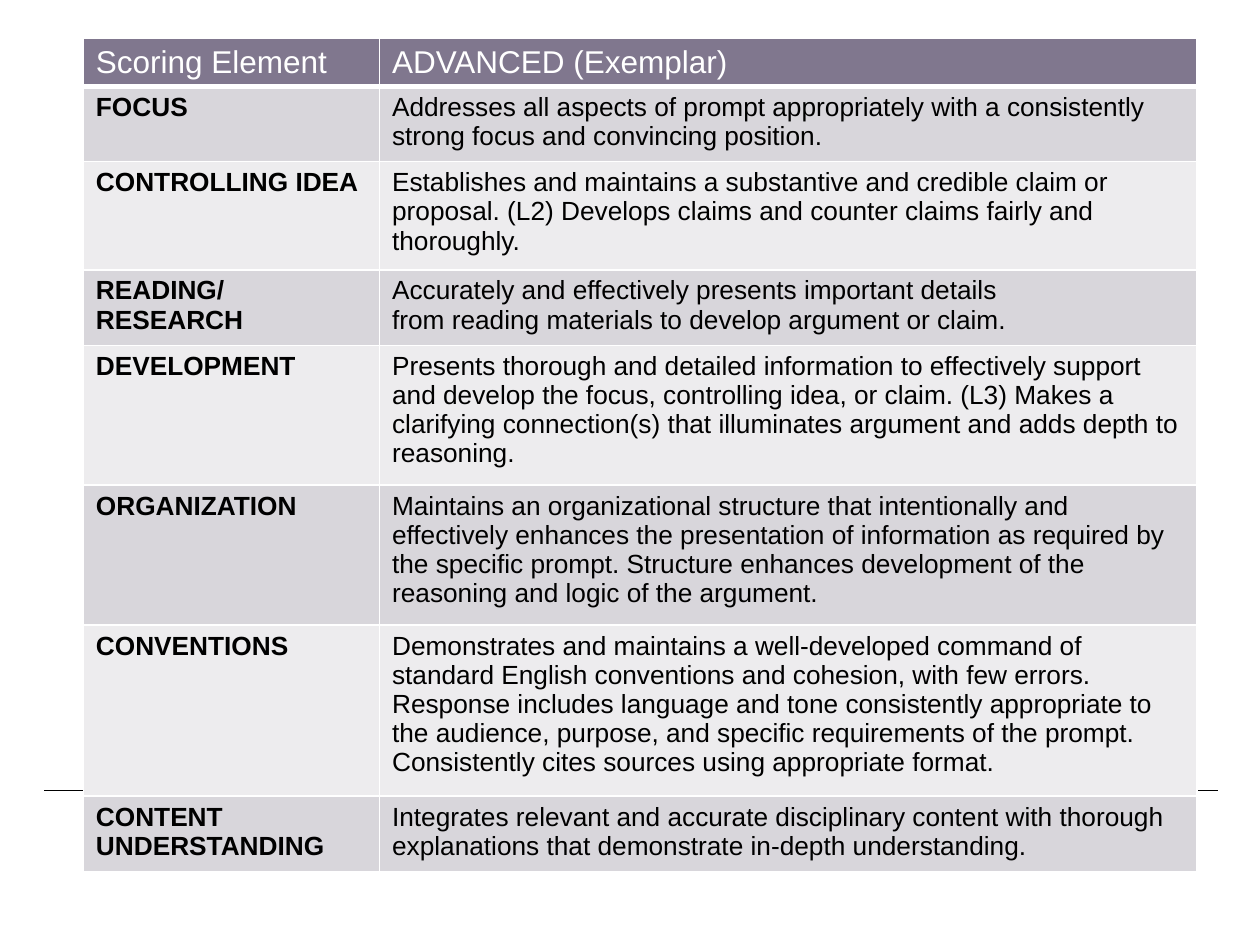
from dataclasses import dataclass

import lxml.etree
import pptx
import pptx.dml.color
import pptx.enum.shapes
import pptx.oxml.ns
import pptx.presentation
import pptx.slide
import pptx.table
import pptx.util

Cm = pptx.util.Cm
Pt = pptx.util.Pt
qn = pptx.oxml.ns.qn

COLORS = {
    "header": "80778E",
    "odd": "D8D6DB",
    "even": "EDECEE",
    "white": "FFFFFF",
    "black": "000000",
}
FONT = "Arial"
COLUMN_WIDTHS = (5.97, 16.48)


@dataclass
class Criterion:
    element: str
    advanced: str
    height: float


HEADER = Criterion("Scoring Element", "ADVANCED (Exemplar)", 0.97)
CRITERIA = [
    Criterion(
        "FOCUS",
        "Addresses all aspects of prompt appropriately with a consistently "
        "strong focus and convincing position.",
        1.52,
    ),
    Criterion(
        "CONTROLLING IDEA",
        "Establishes and maintains a substantive and credible claim or proposal. "
        "(L2) Develops claims and counter claims fairly and thoroughly.",
        2.18,
    ),
    Criterion(
        "READING/ RESEARCH",
        "Accurately and effectively presents important details\n"
        "from reading materials to develop argument or claim.",
        1.52,
    ),
    Criterion(
        "DEVELOPMENT",
        "Presents thorough and detailed information to effectively support and "
        "develop the focus, controlling idea, or claim. (L3) Makes a clarifying "
        "connection(s) that illuminates argument and adds depth to reasoning.",
        2.82,
    ),
    Criterion(
        "ORGANIZATION",
        "Maintains an organizational structure that intentionally and effectively "
        "enhances the presentation of information as required by the specific "
        "prompt. Structure enhances development of the reasoning and logic of "
        "the argument.",
        2.82,
    ),
    Criterion(
        "CONVENTIONS",
        "Demonstrates and maintains a well-developed command of standard English "
        "conventions and cohesion, with few errors. Response includes language and "
        "tone consistently appropriate to the audience, purpose, and specific "
        "requirements of the prompt. Consistently cites sources using appropriate "
        "format.",
        3.45,
    ),
    Criterion(
        "CONTENT UNDERSTANDING",
        "Integrates relevant and accurate disciplinary content with thorough "
        "explanations that demonstrate in-depth understanding.",
        1.52,
    ),
]


def rgb(name: str) -> pptx.dml.color.RGBColor:
    return pptx.dml.color.RGBColor.from_string(COLORS[name])


def set_borders(cell: pptx.table._Cell, bottom: float) -> None:
    tc_pr = cell._tc.get_or_add_tcPr()
    widths = {"a:lnL": 1, "a:lnR": 1, "a:lnT": 1, "a:lnB": bottom}
    for i, (tag, width) in enumerate(widths.items()):
        ln = lxml.etree.Element(qn(tag), w=str(Pt(width)))
        fill = lxml.etree.SubElement(ln, qn("a:solidFill"))
        lxml.etree.SubElement(fill, qn("a:srgbClr"), val=COLORS["white"])
        tc_pr.insert(i, ln)


def fill_cell(
    cell: pptx.table._Cell, text: str, fill: str, color: str,
    size: float, bold: bool, bottom: float,
) -> None:
    cell.fill.solid()
    cell.fill.fore_color.rgb = rgb(fill)
    set_borders(cell, bottom)
    tf = cell.text_frame
    tf.text = text
    for p in tf.paragraphs:
        for r in p.runs:
            r.font.name = FONT
            r.font.size = Pt(size)
            r.font.bold = bold
            r.font.color.rgb = rgb(color)


def add_rule(s: pptx.slide.Slide) -> None:
    y = Cm(15.93)
    line = s.shapes.add_connector(
        pptx.enum.shapes.MSO_CONNECTOR.STRAIGHT, Cm(0.89), y, Cm(24.56), y
    )
    line.line.color.rgb = rgb("black")
    line.line.width = Pt(0.5)
    lxml.etree.SubElement(line._element.spPr, qn("a:effectLst"))


def add_rubric(s: pptx.slide.Slide) -> None:
    rows = [HEADER, *CRITERIA]
    table = s.shapes.add_table(
        len(rows), len(COLUMN_WIDTHS), Cm(1.68), Cm(0.77),
        Cm(sum(COLUMN_WIDTHS)), Cm(sum(row.height for row in rows)),
    ).table
    for column, width in zip(table.columns, COLUMN_WIDTHS):
        column.width = Cm(width)
    for i, row in enumerate(rows):
        table.rows[i].height = Cm(row.height)
        for j, text in enumerate((row.element, row.advanced)):
            cell = table.cell(i, j)
            if i == 0:
                fill_cell(cell, text, "header", "white", 18, False, 3)
            else:
                band = "odd" if i % 2 else "even"
                fill_cell(cell, text, band, "black", 15, j == 0, 1)


def main() -> None:
    prs = pptx.Presentation()
    prs.slide_width = Cm(25.4)
    prs.slide_height = Cm(19.05)
    s = prs.slides.add_slide(prs.slide_layouts[6])
    add_rule(s)
    add_rubric(s)
    prs.save("out.pptx")


if __name__ == "__main__":
    main()
